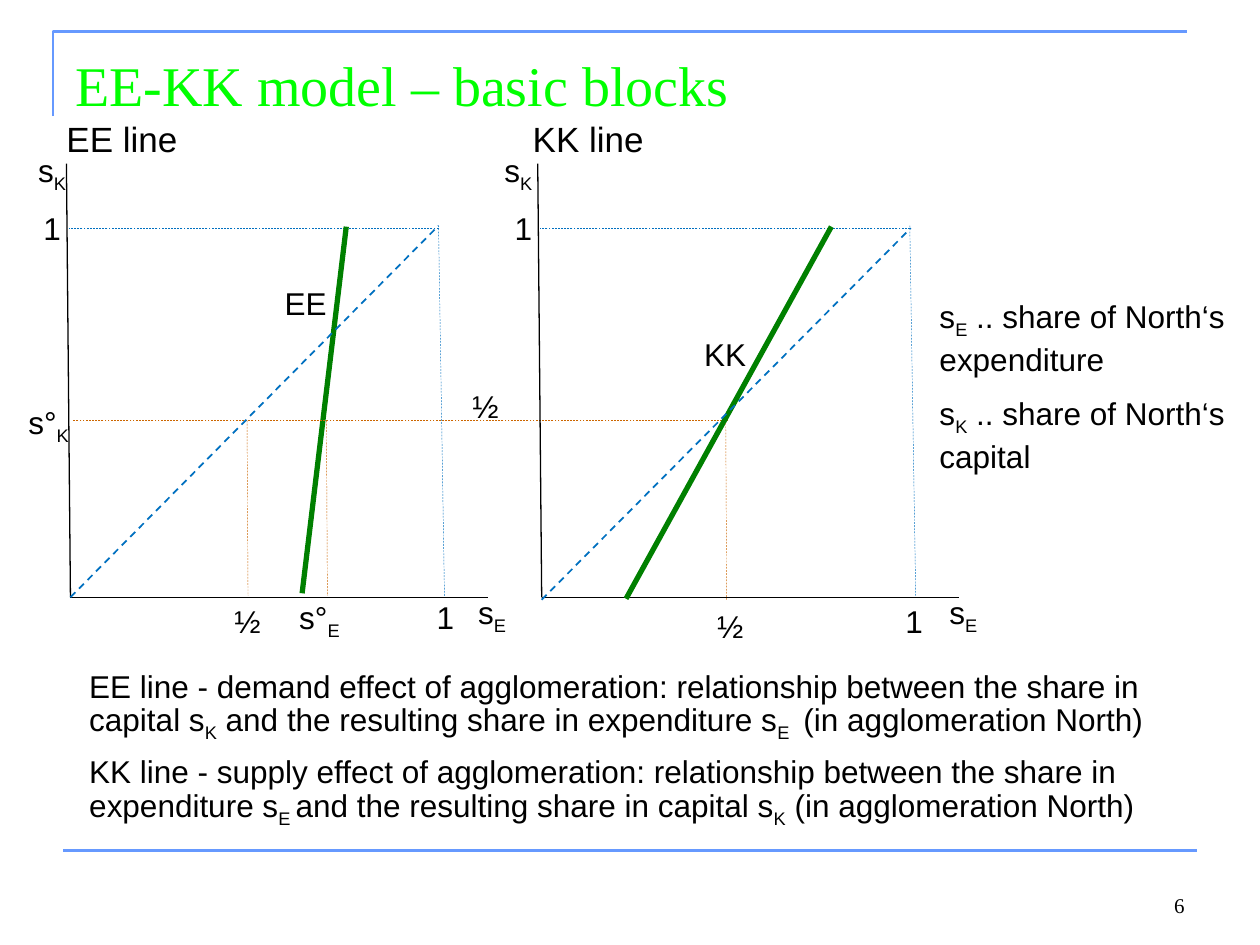
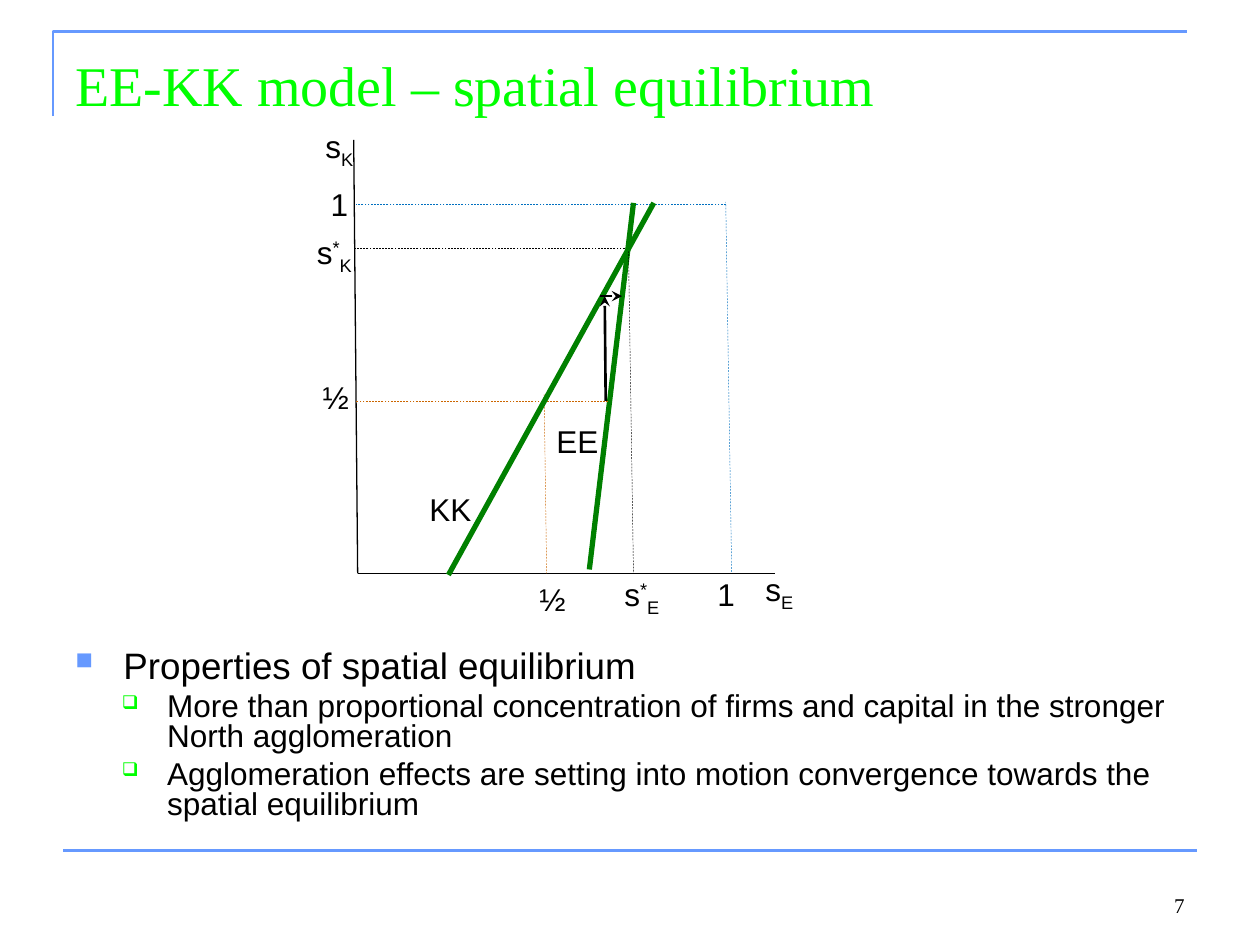
from dataclasses import dataclass

from pptx import Presentation
from pptx.dml.color import RGBColor as RGB
from pptx.enum.dml import MSO_LINE as Dash
from pptx.enum.shapes import MSO_CONNECTOR as Connector
from pptx.enum.text import MSO_ANCHOR as Anchor, PP_ALIGN as Align
from pptx.oxml.ns import qn
from pptx.util import Cm, Pt
from lxml.etree import SubElement


@dataclass(frozen=True)
class Theme:
    ink: RGB = RGB(0x00, 0x00, 0x00)
    band: RGB = RGB(0x66, 0x99, 0xFF)
    bright: RGB = RGB(0x00, 0xFF, 0x00)
    curve: RGB = RGB(0x00, 0x80, 0x00)
    unit: RGB = RGB(0x00, 0x70, 0xC0)
    half: RGB = RGB(0xCC, 0x66, 0x00)
    sans: str = "Arial"
    serif: str = "Times New Roman"
    title: int = 32
    lead: int = 21
    heading: int = 20
    body: int = 18
    footer: int = 12


theme = Theme()

# Line styles: colour, width in points, dash, arrowhead at the start
strokes = {
    "band": (theme.band, 1.5, None, None),
    "axis": (theme.ink, 0.75, None, None),
    "curve": (theme.curve, 3, None, None),
    "unit": (theme.unit, 0.25, Dash.DASH, None),
    "diagonal": (theme.unit, 1, Dash.DASH, None),
    "half": (theme.half, 0.25, Dash.DASH, None),
    "equilibrium": (theme.ink, 0.25, Dash.DASH, None),
    "arrow": (theme.ink, 1.5, None, "stealth"),
}
baselines = {"_": "-25000", "^": "30000"}


def draw_line(slide, start, end, style):
    colour, width, dash, head = strokes[style]
    line = slide.shapes.add_connector(Connector.STRAIGHT, *map(Cm, (*start, *end)))
    line.line.color.rgb = colour
    line.line.width = Pt(width)
    if dash:
        line.line.dash_style = dash
    if head:
        SubElement(line.line._get_or_add_ln(), qn("a:headEnd"), type=head)
    SubElement(line._element.spPr, qn("a:effectLst"))


def write(slide, box, paragraphs, size=theme.body, font=theme.sans, colour=theme.ink,
          frame_format=None, **paragraph_format):
    """Add text; "|" parts the runs, "_" lowers a run and "^" raises it."""
    frame = slide.shapes.add_textbox(*map(Cm, box)).text_frame
    for name, value in {"word_wrap": True, **(frame_format or {})}.items():
        setattr(frame, name, value)
    for index, text in enumerate(paragraphs):
        paragraph = frame.add_paragraph() if index else frame.paragraphs[0]
        for name, value in paragraph_format.items():
            setattr(paragraph, name, value)
        for piece in text.split("|"):
            run = paragraph.add_run()
            run.text = piece.lstrip("_^")
            for name, value in {"size": Pt(size), "name": font}.items():
                setattr(run.font, name, value)
            run.font.color.rgb = colour
            if piece[0] in baselines:
                run._r.get_or_add_rPr().set("baseline", baselines[piece[0]])
    return frame


# Diagrams: lines and labels are in cm from the origin of the axes
ee_curve = ("curve", (4.67, -0.08), (5.56, -7.47))
ee_diagram = {
    "origin": (1.42, 12.04), "heading": "EE line", "heading_x": -0.33,
    "unit_label": (6.86, -0.1), "sk_x": -1.07,
    "lines": [
        ee_curve,
        ("half", (3.56, -3.56), (3.58, -0.03)),
        ("half", (13.26, -3.56), (0.05, -3.56)),
        ("half", (5.16, -3.56), (5.18, -0.03)),
        ("diagonal", (0, 0), (7.42, -7.49)),
    ],
    "labels": [("½", 2.87, -0.03), ("EE", 4.04, -6.43),
               ("s°|_E", 4.32, -0.1), ("s°|_K", -1.14, -4.04)],
}
kk_diagram = {
    "origin": (10.92, 12.04), "heading": "KK line", "heading_x": -0.43,
    "unit_label": (6.81, -0.03), "sk_x": -1.17,
    "lines": [
        ("curve", (1.7, 0.03), (5.84, -7.47)),
        ("half", (3.71, -3.51), (3.73, 0.08)),
        ("diagonal", (0, 0.05), (7.44, -7.44)),
    ],
    "labels": [("½", -1.83, -4.37), ("½", 3.1, 0.08), ("KK", 3.0, -5.41)],
}
equilibrium_diagram = {
    "origin": (7.21, 11.56), "heading": None,
    "unit_label": (6.73, -0.1), "sk_x": -1.07,
    "lines": [
        ee_curve,
        ("half", (3.76, -3.61), (3.81, 0)),
        ("half", (5.05, -3.48), (-0.03, -3.48)),
        ("curve", (1.83, 0.03), (5.97, -7.47)),
        ("equilibrium", (5.38, -6.55), (-0.08, -6.55)),
        ("equilibrium", (5.46, -6.5), (5.56, 0)),
        ("arrow", (4.98, -5.59), (5.0, -3.48)),
        ("arrow", (5.33, -5.59), (4.88, -5.59)),
    ],
    "labels": [("½", 3.23, 0), ("½", -1.14, -4.06), ("EE", 3.73, -3.18), ("KK", 1.17, -1.8),
               ("s|^*|_E", 5.03, -0.1), ("s|^*|_K", -1.17, -6.99)],
}
axes_and_units = [
    ("axis", (-0.08, -8.74), (0, 0)),
    ("axis", (0, 0), (8.41, 0)),
    ("unit", (7.54, -0.03), (7.42, -7.49)),
    ("unit", (7.42, -7.44), (-0.03, -7.44)),
]

deck = Presentation()
deck.slide_width, deck.slide_height = Cm(25.4), Cm(19.05)
pages = [
    (6, "EE-KK model – basic blocks", [ee_diagram, kk_diagram]),
    (7, "EE-KK model – spatial equilibrium", [equilibrium_diagram]),
]
slides = []
for number, title, diagrams in pages:
    slide = deck.slides.add_slide(deck.slide_layouts[6])
    slides.append(slide)

    # Corner rule, bottom rule, slide number and title
    outline = slide.shapes.build_freeform(Cm(1.07), Cm(2.34))
    outline.add_line_segments([(Cm(1.07), Cm(0.64)), (Cm(23.93), Cm(0.64))], close=False)
    corner = outline.convert_to_shape()
    corner.shadow.inherit = False
    corner.fill.background()
    corner.line.color.rgb = theme.band
    corner.line.width = Pt(1.5)
    draw_line(slide, (1.27, 17.15), (24.13, 17.15), "band")
    write(slide, (18.21, 17.35, 5.92, 1.27), [str(number)], theme.footer, theme.serif,
          frame_format={"vertical_anchor": Anchor.BOTTOM}, alignment=Align.RIGHT)
    write(slide, (1.27, 0.76, 22.86, 1.5), [title], theme.title, theme.serif, theme.bright,
          frame_format={"margin_top": Cm(0.25)})

    # Diagrams with their axes, curves and labels
    for diagram in diagrams:
        left, base = diagram["origin"]
        for style, (x1, y1), (x2, y2) in axes_and_units + diagram["lines"]:
            draw_line(slide, (left + x1, base + y1), (left + x2, base + y2), style)
        common_labels = [("s|_E", 7.8, -0.2), ("s|_K", diagram["sk_x"], -9.12),
                         ("1", -1.07, -7.95), ("1", *diagram["unit_label"])]
        for label, x, y in common_labels + diagram["labels"]:
            write(slide, (left + x, base + y, 1.4, 1.02), [label], alignment=Align.CENTER)
        if diagram["heading"]:
            write(slide, (left + diagram["heading_x"], 2.24, 4, 1.09), [diagram["heading"]],
                  theme.heading)

blocks, equilibrium = slides

# Legend and explanation of the two lines
write(blocks, (18.69, 5.87, 6.45, 3.71),
      ["s|_E| .. share of North‘s expenditure", "s|_K| .. share of North‘s capital"],
      space_before=Pt(9))
explanation = write(
    blocks, (1.55, 13.46, 22.3, 3.15),
    ["EE line - demand effect of agglomeration: relationship between the share in capital s|_K"
     "| and the resulting share in expenditure s|_E | (in agglomeration North)",
     "KK line - supply effect of agglomeration: relationship between the share in expenditure s|_E "
     "|and the resulting share in capital s|_K| (in agglomeration North)"],
    line_spacing=0.8, space_before=Pt(12))
explanation.paragraphs[0].space_before = Pt(6)

# Properties of the equilibrium as a two-level list
properties = write(
    equilibrium, (1.27, 13.0, 22.86, 3.96),
    ["Properties of spatial equilibrium",
     "More than proportional concentration of firms and capital in the stronger North agglomeration",
     "Agglomeration effects are setting into motion convergence towards the spatial equilibrium"],
    line_spacing=0.8, space_before=Pt(4))
properties.paragraphs[0].runs[0].font.size = Pt(theme.lead)
levels = [(0.97, -0.97, "■", theme.band, 65), (1.85, -0.91, "❑", theme.bright, 60)]
for index, paragraph in enumerate(properties.paragraphs):
    paragraph.level = min(index, 1)
    margin, indent, mark, colour, percent = levels[paragraph.level]
    settings = paragraph._p.get_or_add_pPr()
    settings.set("marL", str(Cm(margin)))
    settings.set("indent", str(Cm(indent)))
    SubElement(SubElement(settings, qn("a:buClr")), qn("a:srgbClr"), val=str(colour))
    SubElement(settings, qn("a:buSzPct"), val=str(percent * 1000))
    SubElement(settings, qn("a:buChar"), char=mark)

deck.save("out.pptx")
